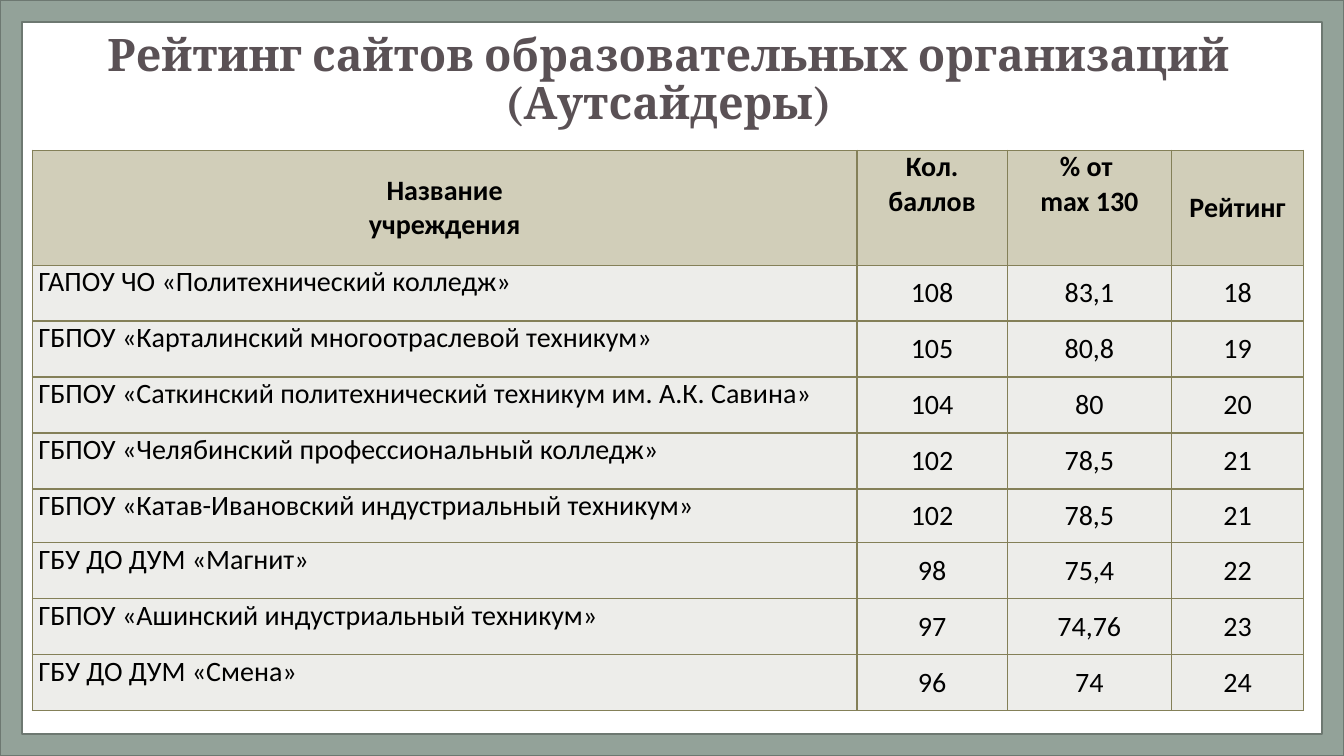
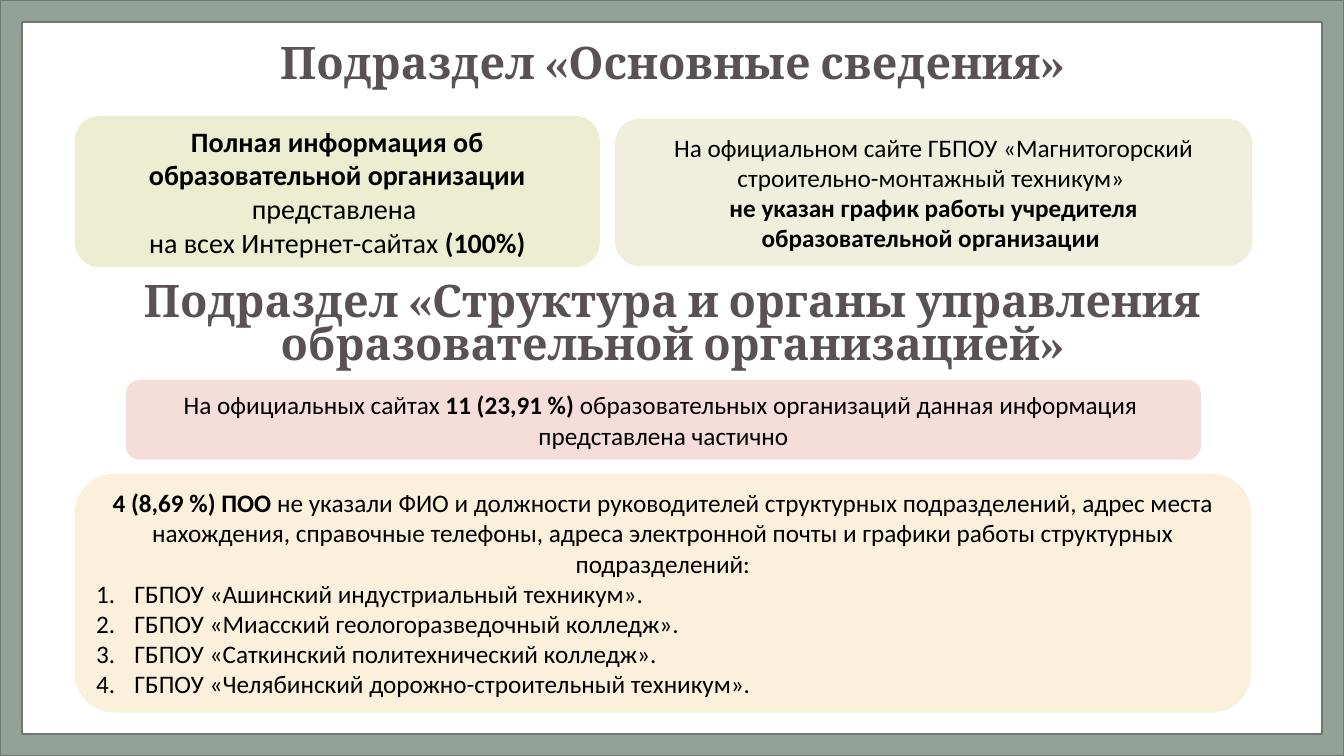
from dataclasses import dataclass

import lxml.etree
import pptx
import pptx.dml.color
import pptx.enum.shapes
import pptx.enum.text
import pptx.oxml.ns
import pptx.presentation
import pptx.shapes.autoshape
import pptx.slide
import pptx.table
import pptx.text.text
import pptx.util

Inches = pptx.util.Inches
Pt = pptx.util.Pt
RGBColor = pptx.dml.color.RGBColor
ALIGN = pptx.enum.text.PP_ALIGN
ANCHOR = pptx.enum.text.MSO_ANCHOR
SHAPE = pptx.enum.shapes.MSO_SHAPE
qn = pptx.oxml.ns.qn

SLIDE_WIDTH, SLIDE_HEIGHT = 13.33, 7.5
TITLE_FONT, BODY_FONT = "Cambria", "Calibri"

FRAME_FILL = RGBColor(0x93, 0xA2, 0x99)
FRAME_LINE = RGBColor(0x6D, 0x78, 0x71)
TITLE_COLOR = RGBColor(0x5A, 0x51, 0x55)
TEXT_COLOR = RGBColor(0x00, 0x00, 0x00)
HEADER_FILL = RGBColor(0xD1, 0xCE, 0xB9)
ROW_FILL = RGBColor(0xED, 0xED, 0xEA)
BORDER_COLOR = RGBColor(0x84, 0x80, 0x58)
GREEN_FILL = RGBColor(0xEC, 0xED, 0xD1)
OLIVE_FILL = RGBColor(0xF0, 0xEF, 0xDD)
PINK_FILL = RGBColor(0xF5, 0xDD, 0xD9)
CREAM_FILL = RGBColor(0xFA, 0xF0, 0xDB)


@dataclass(frozen=True)
class Box:
    left: float
    top: float
    width: float
    height: float

    def lengths(self) -> tuple[int, ...]:
        return tuple(Inches(n) for n in (self.left, self.top, self.width, self.height))


@dataclass(frozen=True)
class Span:
    text: str
    bold: bool = False


@dataclass(frozen=True)
class Line:
    spans: tuple[Span, ...]
    numbered: bool = False


@dataclass(frozen=True)
class Card:
    box: Box
    fill: RGBColor
    size: int
    lines: tuple[Line, ...]


@dataclass(frozen=True)
class HeaderCell:
    text: str
    width: float
    anchor: ANCHOR


@dataclass(frozen=True)
class Rating:
    name: str
    points: str
    percent: str
    rank: str
    short: bool = False


TABLE_HEIGHT, HEADER_HEIGHT, SHORT_ROW_HEIGHT = 5.56, 1.14, 0.53
HEADER = (
    HeaderCell("Название\nучреждения", 8.18, ANCHOR.MIDDLE),
    HeaderCell("Кол. баллов", 1.49, ANCHOR.TOP),
    HeaderCell("% от \nmax 130", 1.63, ANCHOR.TOP),
    HeaderCell("Рейтинг", 1.31, ANCHOR.MIDDLE),
)
RATINGS = (
    Rating("ГАПОУ ЧО «Политехнический колледж»", "108", "83,1", "18"),
    Rating("ГБПОУ «Карталинский многоотраслевой техникум»", "105", "80,8", "19"),
    Rating("ГБПОУ «Саткинский политехнический техникум им. А.К. Савина»", "104", "80", "20"),
    Rating("ГБПОУ «Челябинский профессиональный колледж»", "102", "78,5", "21"),
    Rating("ГБПОУ «Катав-Ивановский индустриальный техникум»", "102", "78,5", "21", True),
    Rating("ГБУ ДО ДУМ «Магнит»", "98", "75,4", "22"),
    Rating("ГБПОУ «Ашинский индустриальный техникум»", "97", "74,76", "23"),
    Rating("ГБУ ДО ДУМ «Смена»", "96", "74", "24"),
)
COLLEGES_WITHOUT_CONTACTS = (
    "ГБПОУ «Ашинский индустриальный техникум».",
    "ГБПОУ «Миасский геологоразведочный колледж».",
    "ГБПОУ «Саткинский политехнический колледж».",
    "ГБПОУ «Челябинский дорожно-строительный техникум».",
)
CARDS = (
    Card(Box(0.74, 1.15, 5.21, 1.5), GREEN_FILL, 20, (
        Line((Span("Полная информация об образовательной организации ", True),
              Span("представлена "))),
        Line((Span("на всех Интернет-сайтах "), Span("(100%)", True))),
    )),
    Card(Box(6.1, 1.18, 6.32, 1.46), OLIVE_FILL, 18, (
        Line((Span("На официальном сайте ГБПОУ «Магнитогорский "
                   "строительно-монтажный техникум» "),)),
        Line((Span("не указан график работы учредителя образовательной организации ", True),)),
    )),
    Card(Box(1.25, 3.77, 10.66, 0.79), PINK_FILL, 18, (
        Line((Span("На официальных сайтах "), Span("11 (23,91 %) ", True),
              Span("образовательных организаций данная информация "))),
        Line((Span("представлена частично"),)),
    )),
    Card(Box(0.74, 4.7, 11.67, 2.37), CREAM_FILL, 18, (
        Line((Span("4 (8,69 %) ПОО ", True),
              Span("не указали ФИО и должности руководителей структурных подразделений, "
                   "адрес места нахождения, справочные телефоны, адреса электронной почты "
                   "и графики работы структурных подразделений:"))),
        *(Line((Span(college),), numbered=True) for college in COLLEGES_WITHOUT_CONTACTS),
    )),
)


def add_frame(slide: pptx.slide.Slide) -> None:
    """Draw the slide border behind the title."""
    frame = slide.shapes.add_shape(
        SHAPE.FRAME, *Box(0, 0, SLIDE_WIDTH, SLIDE_HEIGHT).lengths())
    frame.adjustments[0] = 0.029
    frame.shadow.inherit = False
    frame.fill.solid()
    frame.fill.fore_color.rgb = FRAME_FILL
    frame.line.color.rgb = FRAME_LINE
    frame.line.width = Pt(1)
    slide.shapes.title.element.addprevious(frame.element)


def style_font(paragraph: pptx.text.text._Paragraph, name: str, size: int,
               color: RGBColor, bold: bool) -> None:
    font = paragraph.font
    font.name = name
    font.size = Pt(size)
    font.color.rgb = color
    font.bold = bold


def write_heading(shape: pptx.shapes.autoshape.Shape, box: Box, text: str,
                  line_spacing: float) -> None:
    shape.left, shape.top, shape.width, shape.height = box.lengths()
    frame = shape.text_frame
    frame.text = text
    frame.word_wrap = True
    frame.auto_size = pptx.enum.text.MSO_AUTO_SIZE.NONE
    frame.vertical_anchor = ANCHOR.MIDDLE
    paragraph = frame.paragraphs[0]
    paragraph.alignment = ALIGN.CENTER
    paragraph.line_spacing = line_spacing
    style_font(paragraph, TITLE_FONT, 32, TITLE_COLOR, True)


def number_paragraph(paragraph: pptx.text.text._Paragraph) -> None:
    properties = paragraph._p.get_or_add_pPr()
    properties.set("marL", str(Inches(0.38)))
    properties.set("indent", str(-Inches(0.38)))
    lxml.etree.SubElement(properties, qn("a:buFont"), typeface="+mj-lt")
    lxml.etree.SubElement(properties, qn("a:buAutoNum"), type="arabicPeriod")


def add_card(slide: pptx.slide.Slide, card: Card) -> None:
    shape = slide.shapes.add_shape(SHAPE.ROUNDED_RECTANGLE, *card.box.lengths())
    shape.shadow.inherit = False
    shape.fill.solid()
    shape.fill.fore_color.rgb = card.fill
    shape.line.fill.background()
    frame = shape.text_frame
    frame.word_wrap = True
    frame.vertical_anchor = ANCHOR.MIDDLE
    for index, line in enumerate(card.lines):
        paragraph = frame.add_paragraph() if index else frame.paragraphs[0]
        paragraph.alignment = ALIGN.JUSTIFY if line.numbered else ALIGN.CENTER
        if line.numbered:
            number_paragraph(paragraph)
        style_font(paragraph, BODY_FONT, card.size, TEXT_COLOR, False)
        for span in line.spans:
            run = paragraph.add_run()
            run.text = span.text
            if span.bold:
                run.font.bold = True


def add_borders(cell: pptx.table._Cell) -> None:
    """Put the four border lines ahead of the cell's fill, as the schema requires."""
    properties = cell._tc.get_or_add_tcPr()
    for index, side in enumerate(("lnL", "lnR", "lnT", "lnB")):
        border = lxml.etree.Element(qn(f"a:{side}"), w=str(Pt(1)))
        fill = lxml.etree.SubElement(border, qn("a:solidFill"))
        lxml.etree.SubElement(fill, qn("a:srgbClr"), val=str(BORDER_COLOR))
        properties.insert(index, border)


def write_cell(cell: pptx.table._Cell, text: str, fill: RGBColor, bold: bool,
               alignment: ALIGN, anchor: ANCHOR) -> None:
    cell.text = text
    cell.fill.solid()
    cell.fill.fore_color.rgb = fill
    cell.margin_left = cell.margin_right = Inches(0.06)
    cell.margin_top = cell.margin_bottom = 0
    cell.vertical_anchor = anchor
    for paragraph in cell.text_frame.paragraphs:
        paragraph.alignment = alignment
        style_font(paragraph, BODY_FONT, 20, TEXT_COLOR, bold)
    add_borders(cell)


def rating_row_heights() -> list[float]:
    """Share the height left by the header and short rows among the other rows."""
    short_count = sum(rating.short for rating in RATINGS)
    free_height = TABLE_HEIGHT - HEADER_HEIGHT - short_count * SHORT_ROW_HEIGHT
    row_height = free_height / (len(RATINGS) - short_count)
    return [SHORT_ROW_HEIGHT if rating.short else row_height for rating in RATINGS]


def add_rating_table(slide: pptx.slide.Slide) -> None:
    heights = [HEADER_HEIGHT, *rating_row_heights()]
    box = Box(0.32, 1.49, sum(head.width for head in HEADER), TABLE_HEIGHT)
    table = slide.shapes.add_table(len(heights), len(HEADER), *box.lengths()).table
    for row, height in zip(table.rows, heights):
        row.height = Inches(height)
    for column, head in enumerate(HEADER):
        table.columns[column].width = Inches(head.width)
        write_cell(table.cell(0, column), head.text, HEADER_FILL, True,
                   ALIGN.CENTER, head.anchor)
    for row, rating in enumerate(RATINGS, start=1):
        write_cell(table.cell(row, 0), rating.name, ROW_FILL, False, ALIGN.LEFT, ANCHOR.TOP)
        values = (rating.points, rating.percent, rating.rank)
        for column, value in enumerate(values, start=1):
            write_cell(table.cell(row, column), value, ROW_FILL, False,
                       ALIGN.CENTER, ANCHOR.MIDDLE)


def add_titled_slide(presentation: pptx.presentation.Presentation, title: str,
                     box: Box) -> pptx.slide.Slide:
    title_only = presentation.slide_layouts.get_by_name("Title Only")
    slide = presentation.slides.add_slide(title_only)
    add_frame(slide)
    write_heading(slide.shapes.title, box, title, 0.9)
    return slide


def main() -> None:
    presentation = pptx.Presentation()
    presentation.slide_width = Inches(SLIDE_WIDTH)
    presentation.slide_height = Inches(SLIDE_HEIGHT)

    rating_slide = add_titled_slide(
        presentation, "Рейтинг сайтов образовательных организаций (Аутсайдеры)",
        Box(0.88, 0.26, 11.5, 1.09))
    add_rating_table(rating_slide)

    sections_slide = add_titled_slide(
        presentation, "Подраздел «Основные сведения»", Box(0.92, 0.24, 11.5, 0.8))
    structure_box = Box(0.92, 2.71, 11.5, 1.06)
    write_heading(sections_slide.shapes.add_textbox(*structure_box.lengths()), structure_box,
                  "Подраздел «Структура и органы управления образовательной организацией»", 0.8)
    for card in CARDS:
        add_card(sections_slide, card)

    presentation.save("out.pptx")


if __name__ == "__main__":
    main()
